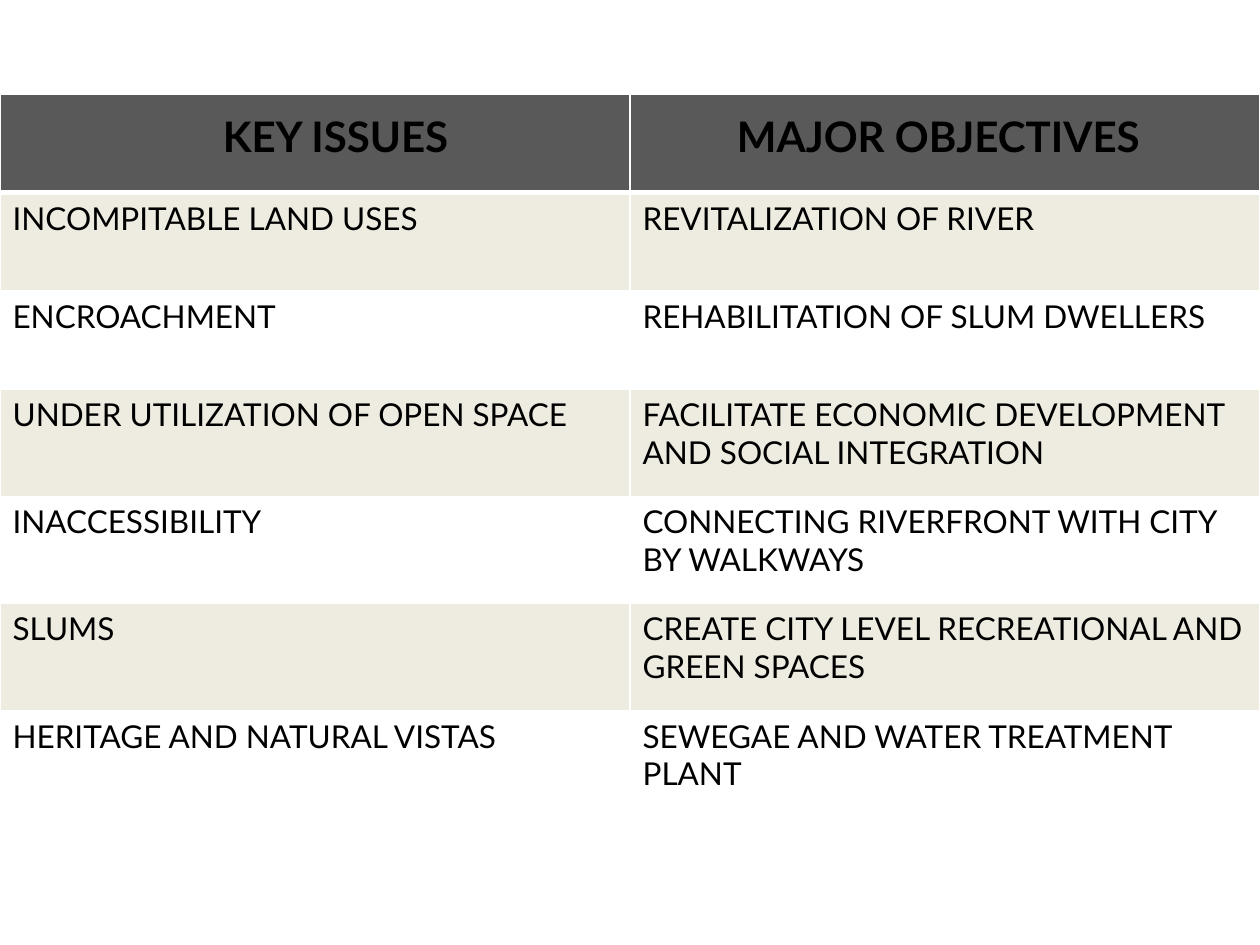
from lxml import etree
from pptx import Presentation
from pptx.dml.color import RGBColor
from pptx.oxml.ns import qn
from pptx.util import Inches, Pt

# Content
HEADINGS = [("KEY ISSUES", 1.67, 2.4), ("MAJOR OBJECTIVES", 5.75, 4.25)]  # text, left, width
ROWS = [
    ("INCOMPITABLE LAND USES", "REVITALIZATION OF RIVER"),
    ("ENCROACHMENT", "REHABILITATION OF SLUM DWELLERS"),
    ("UNDER UTILIZATION OF OPEN SPACE",
     "FACILITATE ECONOMIC DEVELOPMENT AND SOCIAL INTEGRATION"),
    ("INACCESSIBILITY", "CONNECTING RIVERFRONT WITH CITY BY WALKWAYS"),
    ("SLUMS", "CREATE CITY LEVEL RECREATIONAL AND GREEN SPACES"),
    ("HERITAGE AND NATURAL VISTAS", "SEWEGAE AND WATER TREATMENT PLANT"),
]

# Theme and grid
THEME = {
    "font": "Lato", "text": "000000", "header": "595959",
    "bands": ("EEECE1", "FFFFFF"), "rule": "FFFFFF",
    "heading": {"size": Pt(24), "bold": True},
    "body": {"size": Pt(18), "bold": False},
}
SLIDE_W, SLIDE_H = 10, 7.5
TABLE_TOP, HEADING_TOP, HEADING_H = 0.75, 0.83, 0.5
ROW_H, TALL_ROW_H = 0.78, 0.85
TALL_ROWS = (3, 4, 5)


def style(font, level):
    for name, value in {"name": THEME["font"], **THEME[level]}.items():
        setattr(font, name, value)
    font.color.rgb = RGBColor.from_string(THEME["text"])


def format_cell(cell, color, bottom=1):
    tcPr = cell._tc.get_or_add_tcPr()
    for side, width in {"L": 1, "R": 1, "T": 1, "B": bottom}.items():
        ln = etree.SubElement(tcPr, qn(f"a:ln{side}"), w=str(Pt(width)))
        fill = etree.SubElement(ln, qn("a:solidFill"))
        etree.SubElement(fill, qn("a:srgbClr"), val=THEME["rule"])
    cell.fill.solid()
    cell.fill.fore_color.rgb = RGBColor.from_string(color)


def add_issue_table(slide):
    heights = [TALL_ROW_H if i in TALL_ROWS else ROW_H for i in range(len(ROWS) + 1)]
    table = slide.shapes.add_table(
        len(heights), len(HEADINGS), 0, Inches(TABLE_TOP),
        Inches(SLIDE_W), Inches(sum(heights))).table
    for row, height in zip(table.rows, heights):
        row.height = Inches(height)

    # Header band, then alternating rows
    for cell in table.rows[0].cells:
        format_cell(cell, THEME["header"], bottom=3)
    for i, texts in enumerate(ROWS):
        for cell, text in zip(table.rows[i + 1].cells, texts):
            format_cell(cell, THEME["bands"][i % 2])
            r = cell.text_frame.paragraphs[0].add_run()
            r.text = text
            style(r.font, "body")


def add_heading(slide, text, left, width):
    tf = slide.shapes.add_textbox(
        Inches(left), Inches(HEADING_TOP), Inches(width), Inches(HEADING_H)).text_frame
    tf.word_wrap = True
    r = tf.paragraphs[0].add_run()
    r.text = text
    style(r.font, "heading")


def main():
    prs = Presentation()
    prs.slide_width, prs.slide_height = Inches(SLIDE_W), Inches(SLIDE_H)
    slide = prs.slides.add_slide(prs.slide_layouts[6])
    add_issue_table(slide)
    for heading in HEADINGS:
        add_heading(slide, *heading)
    prs.save("out.pptx")


if __name__ == "__main__":
    main()
